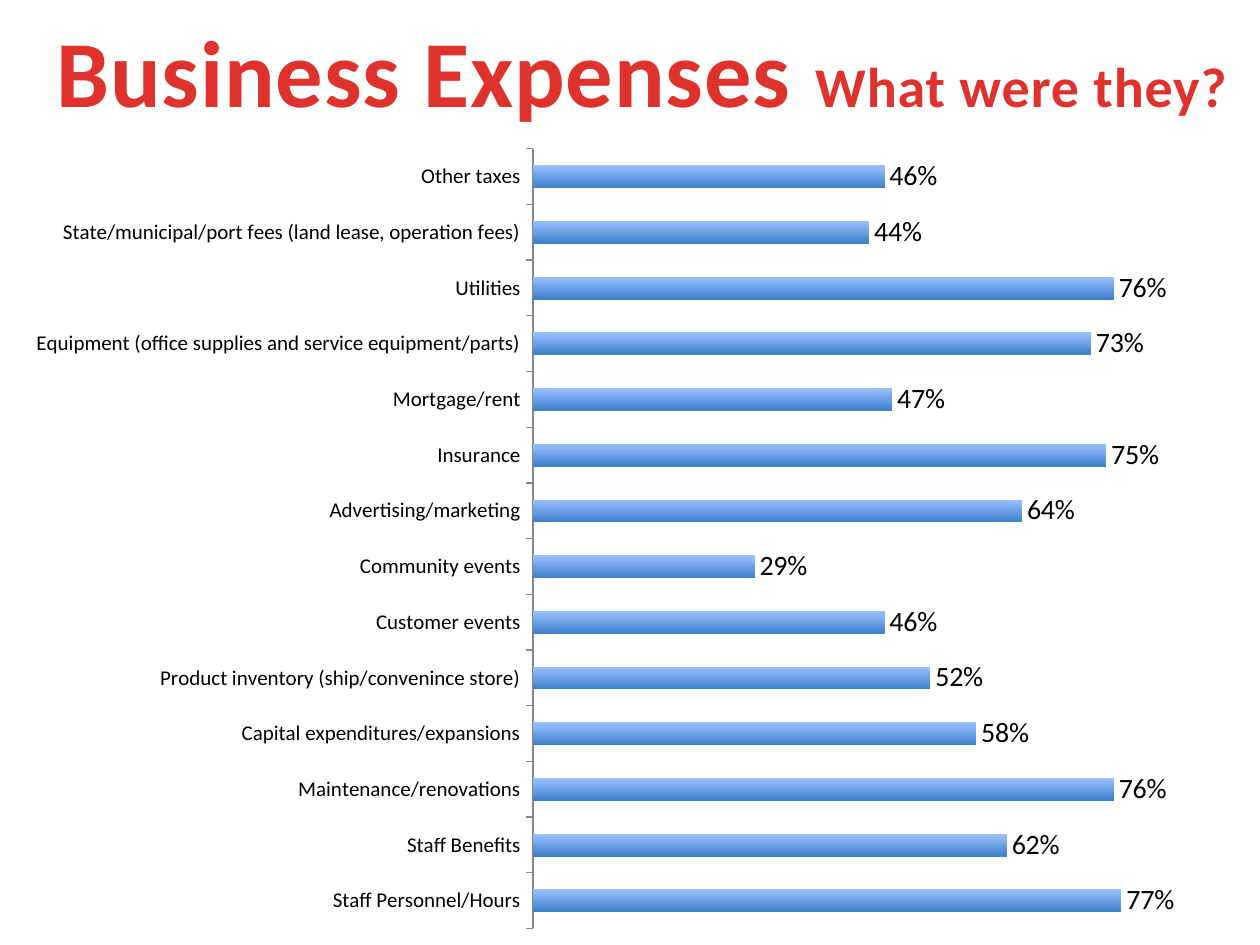
from dataclasses import dataclass

from lxml import etree
from pptx import Presentation
from pptx import util as u
from pptx.chart import data
from pptx.dml import color
from pptx.enum import chart as charts, text


@dataclass(frozen=True)
class Theme:
    font: str = "Calibri"
    title: str = "E0322D"
    ink: str = "000000"
    axis: str = "868686"
    bar_top: str = "9BC1FF"
    bar_bottom: str = "3F80CD"
    title_size: int = 54
    subtitle_size: int = 32
    category_size: int = 12
    label_size: int = 16


EXPENSES = [
    ("Staff Personnel/Hours", 0.77),
    ("Staff Benefits", 0.62),
    ("Maintenance/renovations", 0.76),
    ("Capital expenditures/expansions", 0.58),
    ("Product inventory (ship/convenince store)", 0.52),
    ("Customer events", 0.46),
    ("Community events", 0.29),
    ("Advertising/marketing", 0.64),
    ("Insurance", 0.75),
    ("Mortgage/rent", 0.47),
    ("Equipment (office supplies and service equipment/parts)", 0.73),
    ("Utilities", 0.76),
    ("State/municipal/port fees (land lease, operation fees)", 0.44),
    ("Other taxes", 0.46),
]


class SlideBuilder:
    def __init__(self, slide, theme):
        self.slide = slide
        self.theme = theme

    def style_font(self, font, size, rgb):
        font.name = self.theme.font
        font.size = u.Pt(size)
        font.color.rgb = color.RGBColor.from_string(rgb)

    def add_title(self, box, runs):
        shape = self.slide.shapes.add_textbox(*map(u.Inches, box))
        frame = shape.text_frame
        frame.word_wrap = False
        frame.auto_size = text.MSO_AUTO_SIZE.SHAPE_TO_FIT_TEXT
        paragraph = frame.paragraphs[0]
        paragraph.alignment = text.PP_ALIGN.CENTER
        for words, size in runs:
            run = paragraph.add_run()
            run.text = words
            self.style_font(run.font, size, self.theme.title)
            run.font.bold = True
            run.font._element.set("spc", "50")

    def add_bar_chart(self, box, rows, plot):
        chart_data = data.CategoryChartData(number_format="0%")
        chart_data.categories = [name for name, _ in rows]
        chart_data.add_series("Series 1", [value for _, value in rows])
        chart = self.slide.shapes.add_chart(
            charts.XL_CHART_TYPE.BAR_CLUSTERED, *map(u.Inches, box), chart_data
        ).chart
        chart.has_title = False
        chart.has_legend = False
        self.style_font(chart.font, 10, self.theme.ink)
        self.style_axes(chart)
        self.style_bars(chart.plots[0])
        self.place_plot(chart, box, plot)

    def style_axes(self, chart):
        categories = chart.category_axis
        categories.major_tick_mark = charts.XL_TICK_MARK.OUTSIDE
        categories.has_major_gridlines = False
        categories.format.line.color.rgb = color.RGBColor.from_string(self.theme.axis)
        self.style_font(
            categories.tick_labels.font, self.theme.category_size, self.theme.ink
        )
        values = chart.value_axis
        values.minimum_scale = 0
        values.maximum_scale = 0.9
        values.has_major_gridlines = False
        values.visible = False

    def style_bars(self, plot):
        plot.gap_width = 150
        plot.vary_by_categories = False
        fill = plot.series[0].format.fill
        fill.gradient()
        fill.gradient_angle = 270
        shades = (self.theme.bar_top, self.theme.bar_bottom)
        for stop, shade in zip(fill.gradient_stops, shades):
            stop.color.rgb = color.RGBColor.from_string(shade)
        plot.has_data_labels = True
        labels = plot.data_labels
        labels.show_value = True
        labels.number_format = "0%"
        labels.number_format_is_linked = False
        labels.position = charts.XL_LABEL_POSITION.OUTSIDE_END
        self.style_font(labels.font, self.theme.label_size, self.theme.ink)

    def place_plot(self, chart, box, plot):
        area = chart._chartSpace.chart.plotArea
        namespace = etree.QName(area).namespace
        for old in area.findall(f"{{{namespace}}}layout"):
            area.remove(old)
        layout = etree.Element(f"{{{namespace}}}layout")
        manual = etree.SubElement(layout, f"{{{namespace}}}manualLayout")
        left, top, width, height = box
        settings = {
            "layoutTarget": "inner",
            "xMode": "edge",
            "yMode": "edge",
            "x": (plot[0] - left) / width,
            "y": (plot[1] - top) / height,
            "w": plot[2] / width,
            "h": plot[3] / height,
        }
        for name, value in settings.items():
            etree.SubElement(manual, f"{{{namespace}}}{name}", val=str(value))
        area.insert(0, layout)


def main():
    presentation = Presentation()
    presentation.slide_width = u.Inches(10)
    presentation.slide_height = u.Inches(7.5)
    theme = Theme()
    slide = presentation.slides.add_slide(presentation.slide_layouts[6])
    builder = SlideBuilder(slide, theme)
    builder.add_title(
        (0.3, 0.05, 9.59, 1.01),
        [
            ("Business Expenses ", theme.title_size),
            ("What were they?", theme.subtitle_size),
        ],
    )
    builder.add_bar_chart(
        (0.1, 1.06, 9.8, 6.44), EXPENSES, plot=(4.23, 1.18, 5.46, 6.19)
    )
    presentation.save("out.pptx")


if __name__ == "__main__":
    main()
